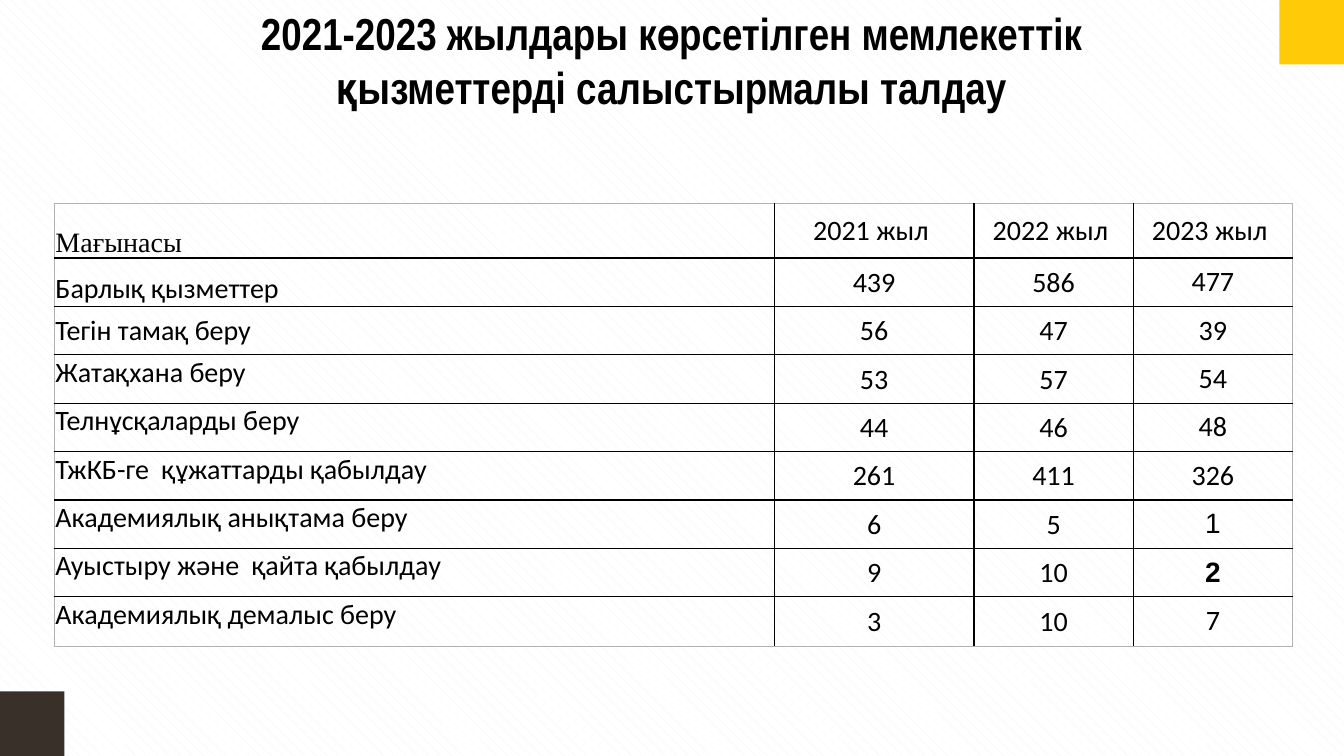
import pptx
import pptx.util
import pptx.dml.color
import pptx.enum.dml
import pptx.enum.shapes
import pptx.enum.text
import pptx.oxml

Inches = pptx.util.Inches
Pt = pptx.util.Pt
ALIGN = pptx.enum.text.PP_ALIGN
ANCHOR = pptx.enum.text.MSO_ANCHOR
NS = "http://schemas.openxmlformats.org/drawingml/2006/main"

COLORS = {"yellow": "FFCA08", "brown": "39302A", "black": "000000",
          "frame": "B2B2B2", "hatch": "F2F2F2", "white": "FFFFFF"}

HEADER = ["Мағынасы", "2021 жыл ", "2022 жыл ", "2023 жыл "]
SERVICES = [
    ["Барлық қызметтер", "439", "586", "477"],
    ["Тегін тамақ беру", "56", "47", "39"],
    ["Жатақхана беру", "53", "57", "54"],
    ["Телнұсқаларды беру", "44", "46", "48"],
    ["ТжКБ-ге  құжаттарды қабылдау", "261", "411", "326"],
    ["Академиялық анықтама беру", "6", "5", "1"],
    ["Ауыстыру және  қайта қабылдау", "9", "10", "2"],
    ["Академиялық демалыс беру", "3", "10", "7"],
]
COL_WIDTHS = [7.14, 1.98, 1.58, 1.58]
ROW_HEIGHTS = [0.54] + [0.48] * 7 + [0.49]
LABEL_ANCHORS = {0: ANCHOR.BOTTOM, 1: ANCHOR.BOTTOM, 2: ANCHOR.MIDDLE}
SPECIAL_FONTS = {(0, 0): {"name": "Times New Roman"},
                 (6, 3): {"name": "Arial"},
                 (7, 3): {"name": "Arial", "bold": True}}


class Deck:
    def __init__(self, prs):
        self.s = prs.slides.add_slide(prs.slide_layouts[6])
        self.body = {"name": "Calibri", "size": Pt(20), "bold": False}
        self.title = {"name": "Arial Narrow", "size": Pt(32), "bold": True}

    def rgb(self, name):
        return pptx.dml.color.RGBColor.from_string(COLORS[name])

    def background(self, fore, back):
        fill = self.s.background.fill
        fill.patterned()
        fill.pattern = pptx.enum.dml.MSO_PATTERN.SHINGLE
        fill.fore_color.rgb = self.rgb(fore)
        fill.back_color.rgb = self.rgb(back)

    def square(self, left, top, size, color):
        sp = self.s.shapes.add_shape(
            pptx.enum.shapes.MSO_SHAPE.RECTANGLE,
            Inches(left), Inches(top), Inches(size), Inches(size))
        sp.shadow.inherit = False
        sp.fill.solid()
        sp.fill.fore_color.rgb = self.rgb(color)
        sp.line.fill.background()

    def add_text(self, tf, text, style, align):
        p = tf.paragraphs[0]
        p.alignment = align
        r = p.add_run()
        r.text = text
        for key, value in style.items():
            setattr(r.font, key, value)
        r.font.color.rgb = self.rgb("black")

    def heading(self, left, top, width, height, text):
        tf = self.s.shapes.add_textbox(
            Inches(left), Inches(top), Inches(width), Inches(height)).text_frame
        frame = {"word_wrap": True, "vertical_anchor": ANCHOR.MIDDLE,
                 "margin_left": 0, "margin_right": 0,
                 "margin_top": 0, "margin_bottom": 0}
        for key, value in frame.items():
            setattr(tf, key, value)
        self.add_text(tf, text, self.title, ALIGN.CENTER)

    def border(self, cell, side, outer):
        width, color = (Pt(0.5), "frame") if outer else (Pt(1), "black")
        cell._tc.get_or_add_tcPr().append(pptx.oxml.parse_xml(
            f'<a:{side} xmlns:a="{NS}" w="{width}"><a:solidFill>'
            f'<a:srgbClr val="{COLORS[color]}"/></a:solidFill></a:{side}>'))

    def table(self, left, top, rows, widths, heights):
        tbl = self.s.shapes.add_table(
            len(rows), len(widths), Inches(left), Inches(top),
            Inches(sum(widths)), Inches(sum(heights))).table
        tbl.first_row = tbl.horz_banding = False
        for col, width in zip(tbl.columns, widths):
            col.width = Inches(width)
        for row, height in zip(tbl.rows, heights):
            row.height = Inches(height)
        for i, values in enumerate(rows):
            for j, text in enumerate(values):
                cell = tbl.cell(i, j)
                margin = Inches(0 if i and j == 3 else 0.01)
                anchor = ANCHOR.MIDDLE if j else LABEL_ANCHORS.get(i, ANCHOR.TOP)
                layout = {"margin_left": margin, "margin_right": margin,
                          "margin_top": margin, "margin_bottom": 0,
                          "vertical_anchor": anchor}
                for key, value in layout.items():
                    setattr(cell, key, value)
                edges = {"lnL": j == 0, "lnR": j == len(widths) - 1,
                         "lnT": i == 0, "lnB": i == len(rows) - 1}
                for side, outer in edges.items():
                    self.border(cell, side, outer)
                cell.fill.background()
                style = {**self.body, **SPECIAL_FONTS.get((i, j), {})}
                self.add_text(cell.text_frame, text, style,
                              ALIGN.CENTER if j else ALIGN.LEFT)


def main():
    prs = pptx.Presentation()
    prs.slide_width, prs.slide_height = Inches(13.33), Inches(7.5)
    deck = Deck(prs)
    deck.background("hatch", "white")
    deck.square(12.69, 0, 0.64, "yellow")
    deck.square(0, 6.86, 0.64, "brown")
    deck.heading(1.6, 0.05, 10.13, 1.08,
                 "2021-2023 жылдары көрсетілген мемлекеттік "
                 "қызметтерді салыстырмалы талдау")
    deck.table(0.54, 2.02, [HEADER] + SERVICES, COL_WIDTHS, ROW_HEIGHTS)
    prs.save("out.pptx")


if __name__ == "__main__":
    main()
